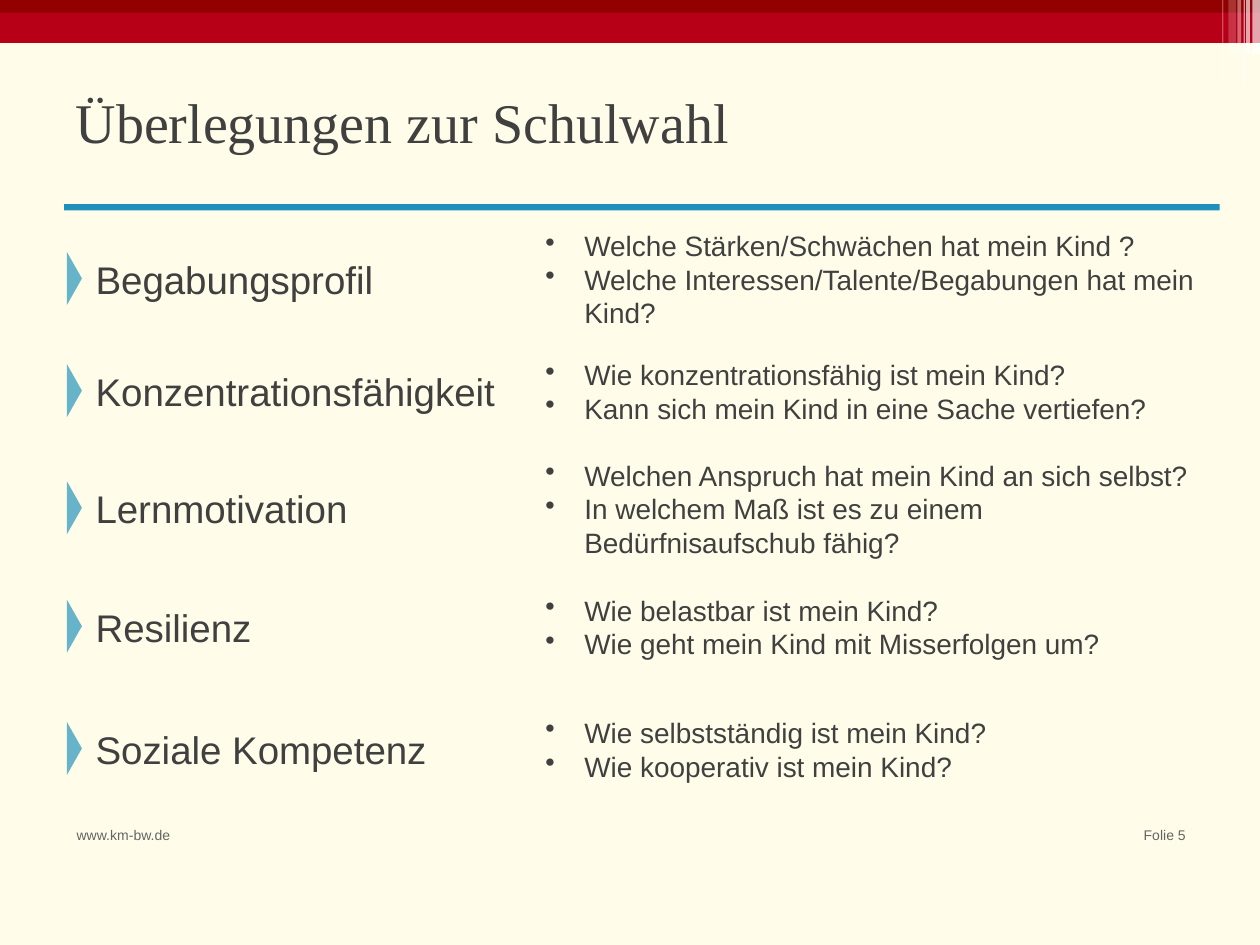
import dataclasses
import typing

import lxml.etree
import pptx
import pptx.dml.color
import pptx.enum.shapes
import pptx.enum.text
import pptx.oxml.ns
import pptx.util

RGBColor = pptx.dml.color.RGBColor
CREAM = RGBColor(0xFF, 0xFD, 0xE9)
RED = RGBColor(0xB7, 0x00, 0x17)
DARK_RED = RGBColor(0x92, 0x00, 0x00)
WHITE = RGBColor(0xFF, 0xFF, 0xFF)
BLUE = RGBColor(0x1E, 0x90, 0xBC)
CHARCOAL = RGBColor(0x40, 0x40, 0x40)
GREY = RGBColor(0x64, 0x64, 0x64)

SHAPES = pptx.enum.shapes.MSO_SHAPE
ALIGN = pptx.enum.text.PP_ALIGN
ANCHOR = pptx.enum.text.MSO_ANCHOR

WIDTH = pptx.util.Inches(10)
HEIGHT = pptx.util.Inches(7.5)
COLUMNS = 100
ROWS = 75
INDENT = 3.1
CELL_HEIGHT = 7.9
ARROW_DROP = 1.8


@dataclasses.dataclass(frozen=True)
class Area:
    column: float
    row: float
    columns: float
    rows: float

    def box(self) -> tuple[int, ...]:
        return (across(self.column), down(self.row), across(self.columns), down(self.rows))


@dataclasses.dataclass(frozen=True)
class Stripe:
    column: float
    columns: float
    rows: float
    opacity: int


@dataclasses.dataclass(frozen=True)
class Criterion:
    row: float
    name: str
    questions: tuple[str, ...]


STRIPES = (
    Stripe(98.9, 0.3, 4.3, 65),
    Stripe(99.4, 0.6, 4.3, 65),
    Stripe(97, 0.1, 6.4, 30),
    Stripe(98.7, 0.1, 6.8, 60),
    Stripe(97.5, 0.6, 4.3, 20),
    Stripe(98.2, 0.3, 4.3, 40),
)

CRITERIA = (
    Criterion(18.2, "Begabungsprofil", (
        "Welche Stärken/Schwächen hat mein Kind ?",
        "Welche Interessen/Talente/Begabungen hat mein Kind?")),
    Criterion(27.1, "Konzentrationsfähigkeit", (
        "Wie konzentrationsfähig ist mein Kind?",
        "Kann sich mein Kind in eine Sache vertiefen?")),
    Criterion(36.4, "Lernmotivation", (
        "Welchen Anspruch hat mein Kind an sich selbst?",
        "In welchem Maß ist es zu einem Bedürfnisaufschub fähig?")),
    Criterion(45.8, "Resilienz", (
        "Wie belastbar ist mein Kind?",
        "Wie geht mein Kind mit Misserfolgen um?")),
    Criterion(55.5, "Soziale Kompetenz", (
        "Wie selbstständig ist mein Kind?",
        "Wie kooperativ ist mein Kind?")),
)


def across(columns: float) -> int:
    return round(WIDTH * columns / COLUMNS)


def down(rows: float) -> int:
    return round(HEIGHT * rows / ROWS)


def draw_shape(slide: typing.Any, area: Area, color: RGBColor, opacity: int = 100,
               preset: typing.Any = SHAPES.RECTANGLE) -> typing.Any:
    shape = slide.shapes.add_shape(preset, *area.box())
    shape.shadow.inherit = False
    shape.line.fill.background()
    shape.fill.solid()
    shape.fill.fore_color.rgb = color
    if opacity < 100:
        tint = shape.element.spPr.find(".//" + pptx.oxml.ns.qn("a:srgbClr"))
        alpha = lxml.etree.SubElement(tint, pptx.oxml.ns.qn("a:alpha"))
        alpha.set("val", str(opacity * 1000))
    return shape


def add_bullet(paragraph: typing.Any) -> None:
    properties = paragraph._p.get_or_add_pPr()
    properties.set("marL", str(across(INDENT)))
    properties.set("indent", str(-across(INDENT)))
    bullet = lxml.etree.SubElement(properties, pptx.oxml.ns.qn("a:buChar"))
    bullet.set("char", "•")


def write(frame: typing.Any, lines: typing.Sequence[str], size: float, color: RGBColor,
          font: str = "Arial", align: typing.Any = ALIGN.LEFT,
          anchor: typing.Any = ANCHOR.MIDDLE, bulleted: bool = False) -> None:
    frame.text = "\n".join(lines)
    frame.word_wrap = True
    frame.vertical_anchor = anchor
    for paragraph in frame.paragraphs:
        paragraph.alignment = align
        if bulleted:
            add_bullet(paragraph)
        for run in paragraph.runs:
            run.font.name = font
            run.font.size = pptx.util.Pt(size)
            run.font.color.rgb = color


def draw_banner(slide: typing.Any) -> None:
    draw_shape(slide, Area(0, 0, COLUMNS, 3.4), RED)
    draw_shape(slide, Area(0, 0, COLUMNS, 1), DARK_RED)
    for stripe in STRIPES:
        draw_shape(slide, Area(stripe.column, 0, stripe.columns, stripe.rows),
                   WHITE, stripe.opacity)


def draw_heading(slide: typing.Any) -> None:
    heading = slide.shapes.title
    heading.left, heading.top, heading.width, heading.height = Area(5, 6.1, 90, 7.7).box()
    write(heading.text_frame, ["Überlegungen zur Schulwahl"], 32, CHARCOAL, "Times New Roman")
    heading.text_frame.auto_size = pptx.enum.text.MSO_AUTO_SIZE.NONE
    heading.text_frame.paragraphs[0].line_spacing = 0.9
    draw_shape(slide, Area(5.1, 16.2, 91.7, 0.5), BLUE)


def draw_criterion(slide: typing.Any, criterion: Criterion) -> None:
    name = slide.shapes.add_textbox(*Area(6.6, criterion.row, 34.5, CELL_HEIGHT).box())
    write(name.text_frame, [criterion.name], 22, CHARCOAL)
    questions = draw_shape(slide, Area(42.3, criterion.row, 54.4, CELL_HEIGHT), CREAM)
    write(questions.text_frame, criterion.questions, 16, CHARCOAL, bulleted=True)
    arrow = draw_shape(slide, Area(5.3, criterion.row + ARROW_DROP, 1.2, 4.2),
                       BLUE, 68, SHAPES.PENTAGON)
    arrow.adjustments[0] = 0.99


def draw_footer(slide: typing.Any, area: Area, text: str, align: typing.Any) -> None:
    footer = slide.shapes.add_textbox(*area.box())
    write(footer.text_frame, [text], 8, GREY, align=align, anchor=ANCHOR.TOP)


def main() -> None:
    presentation = pptx.Presentation()
    presentation.slide_width, presentation.slide_height = WIDTH, HEIGHT
    slide = presentation.slides.add_slide(presentation.slide_layouts.get_by_name("Title Only"))
    slide.background.fill.solid()
    slide.background.fill.fore_color.rgb = CREAM
    draw_banner(slide)
    draw_heading(slide)
    for criterion in CRITERIA:
        draw_criterion(slide, criterion)
    draw_footer(slide, Area(5.1, 65.1, 10, 3.9), "www.km-bw.de", ALIGN.LEFT)
    draw_footer(slide, Area(85.4, 65.1, 9.7, 3.9), "Folie 5", ALIGN.RIGHT)
    presentation.save("out.pptx")


if __name__ == "__main__":
    main()
